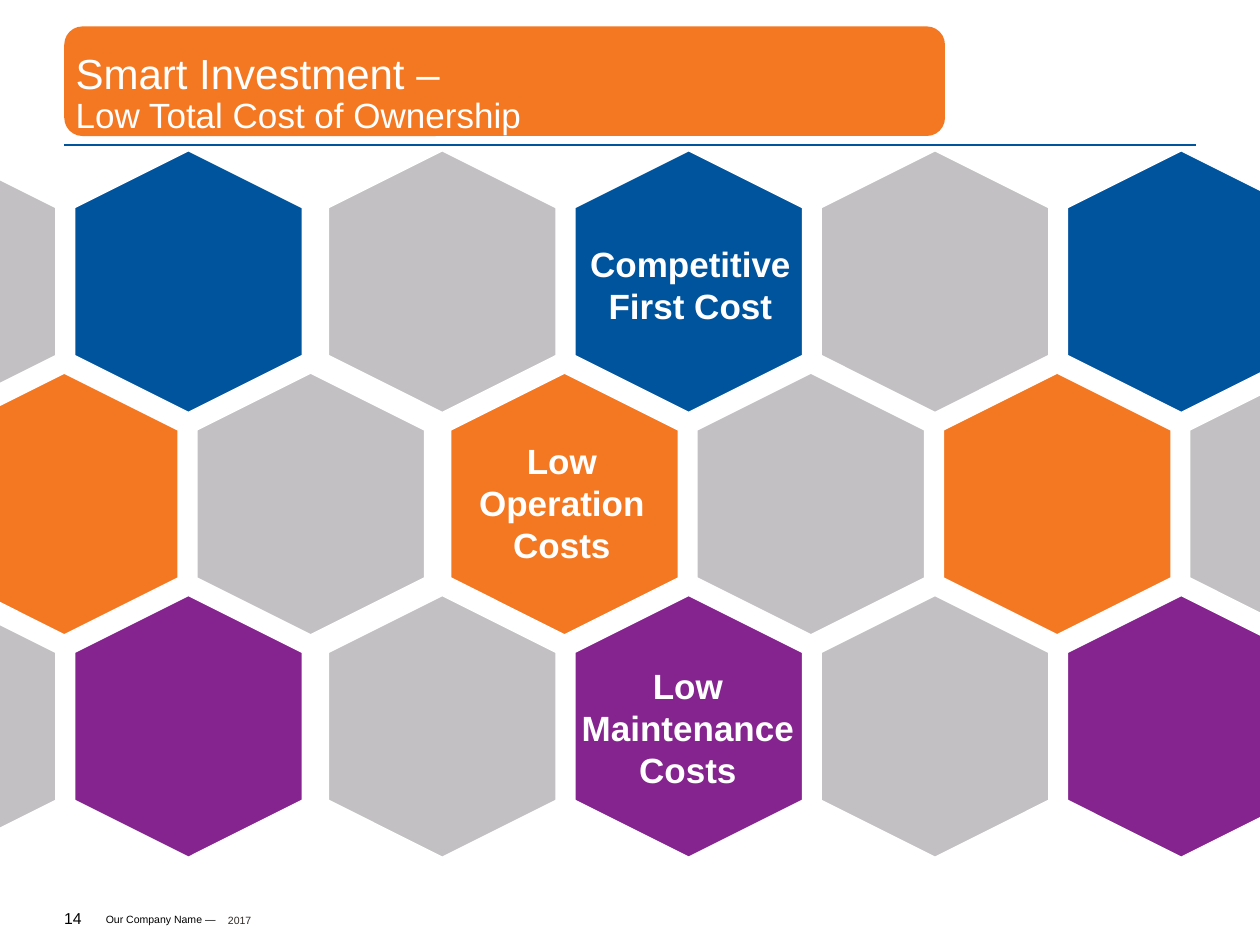
from dataclasses import dataclass
from lxml.etree import SubElement
from pptx import Presentation
from pptx.dml.color import RGBColor
from pptx.enum.shapes import MSO_CONNECTOR, MSO_SHAPE
from pptx.enum.text import MSO_ANCHOR, PP_ALIGN
from pptx.oxml.ns import qn
from pptx.util import Inches, Pt


@dataclass(frozen=True)
class Theme:
    font: str = "Arial"
    blue: str = "00549E"
    orange: str = "F47721"
    purple: str = "85248F"
    gray: str = "C2C0C2"
    white: str = "FFFFFF"
    black: str = "000000"
    dark: str = "2E2A25"
    title: int = 24
    label: int = 20
    number: int = 9
    footer: int = 6


class Deck:
    def __init__(self, theme, slide):
        self.theme = theme
        self.slide = slide

    def shape(self, kind, box, fill, edge=None):
        shape = self.slide.shapes.add_shape(kind, *map(Inches, box))
        shape.shadow.inherit = False
        shape.fill.solid()
        shape.fill.fore_color.rgb = RGBColor.from_string(fill)
        if edge:
            shape.line.color.rgb = RGBColor.from_string(edge)
            shape.line.width = Pt(1)
        else:
            shape.line.fill.background()
        return shape

    def hexagon(self, left, top, fill):
        shape = self.shape(MSO_SHAPE.HEXAGON, (left, top, 2.08, 1.81), fill, self.theme.white)
        shape.adjustments[0] = 0.25
        shape.rotation = 90

    def rule(self, left, top, right):
        line = self.slide.shapes.add_connector(
            MSO_CONNECTOR.STRAIGHT, Inches(left), Inches(top), Inches(right), Inches(top))
        line.line.color.rgb = RGBColor.from_string(self.theme.blue)
        line.line.width = Pt(0.75)
        SubElement(line._element.spPr, qn("a:effectLst"))

    def text(self, box, words, size, color, anchor=MSO_ANCHOR.MIDDLE,
             align=PP_ALIGN.LEFT, bold=False, inset=0):
        frame = self.slide.shapes.add_textbox(*map(Inches, box)).text_frame
        frame.word_wrap = True
        frame.vertical_anchor = anchor
        frame.margin_left = frame.margin_right = Inches(inset)
        frame.margin_top = frame.margin_bottom = 0
        para = frame.paragraphs[0]
        para.text = words
        para.alignment = align
        para.font.name = self.theme.font
        para.font.size = Pt(size)
        para.font.bold = bold
        para.font.color.rgb = RGBColor.from_string(color)
        return para

    def title(self, box, head, sub):
        para = self.text(box, head, self.theme.title, self.theme.white,
                         MSO_ANCHOR.BOTTOM, inset=0.09)
        para.line_spacing = 0.9
        para.add_line_break()
        run = para.add_run()
        run.text = sub
        run.font.size = Pt(self.theme.label)


def main():
    theme = Theme()
    show = Presentation()
    show.slide_width, show.slide_height = Inches(10), Inches(7.5)
    deck = Deck(theme, show.slides.add_slide(show.slide_layouts[6]))

    deck.rule(0.51, 1.15, 9.49)
    deck.text((0.84, 7.25, 1.2, 0.1), "Our Company Name —", theme.footer,
              theme.black, MSO_ANCHOR.TOP)
    deck.text((0.51, 7.17, 0.3, 0.24), "14", theme.number, theme.black)
    deck.text((1.81, 7.2, 5.2, 0.21), "2017", theme.footer, theme.dark)

    deck.shape(MSO_SHAPE.ROUNDED_RECTANGLE, (0.51, 0.21, 6.99, 0.87), theme.orange)
    deck.title((0.51, 0.21, 7.18, 0.87), "Smart Investment –", "Low Total Cost of Ownership")

    step, rise, seam = 1.955, 1.765, 0.06
    for row, color in enumerate((theme.blue, theme.orange, theme.purple)):
        start = -0.53 if row == 1 else -1.5
        for col in range(6):
            left = start + col * step + (seam if col > 1 else 0)
            fill = color if (row + col) % 2 else theme.gray
            deck.hexagon(left, 1.33 + row * rise, fill)

    labels = (
        ((4.53, 1.87, 1.9, 0.77), "Competitive First Cost"),
        ((3.51, 3.43, 1.9, 1.11), "Low Operation Costs"),
        ((4.51, 5.22, 1.9, 1.11), "Low Maintenance Costs"),
    )
    for box, words in labels:
        deck.text(box, words, theme.label, theme.white,
                  align=PP_ALIGN.CENTER, bold=True, inset=0.1)

    show.save("out.pptx")


if __name__ == "__main__":
    main()
